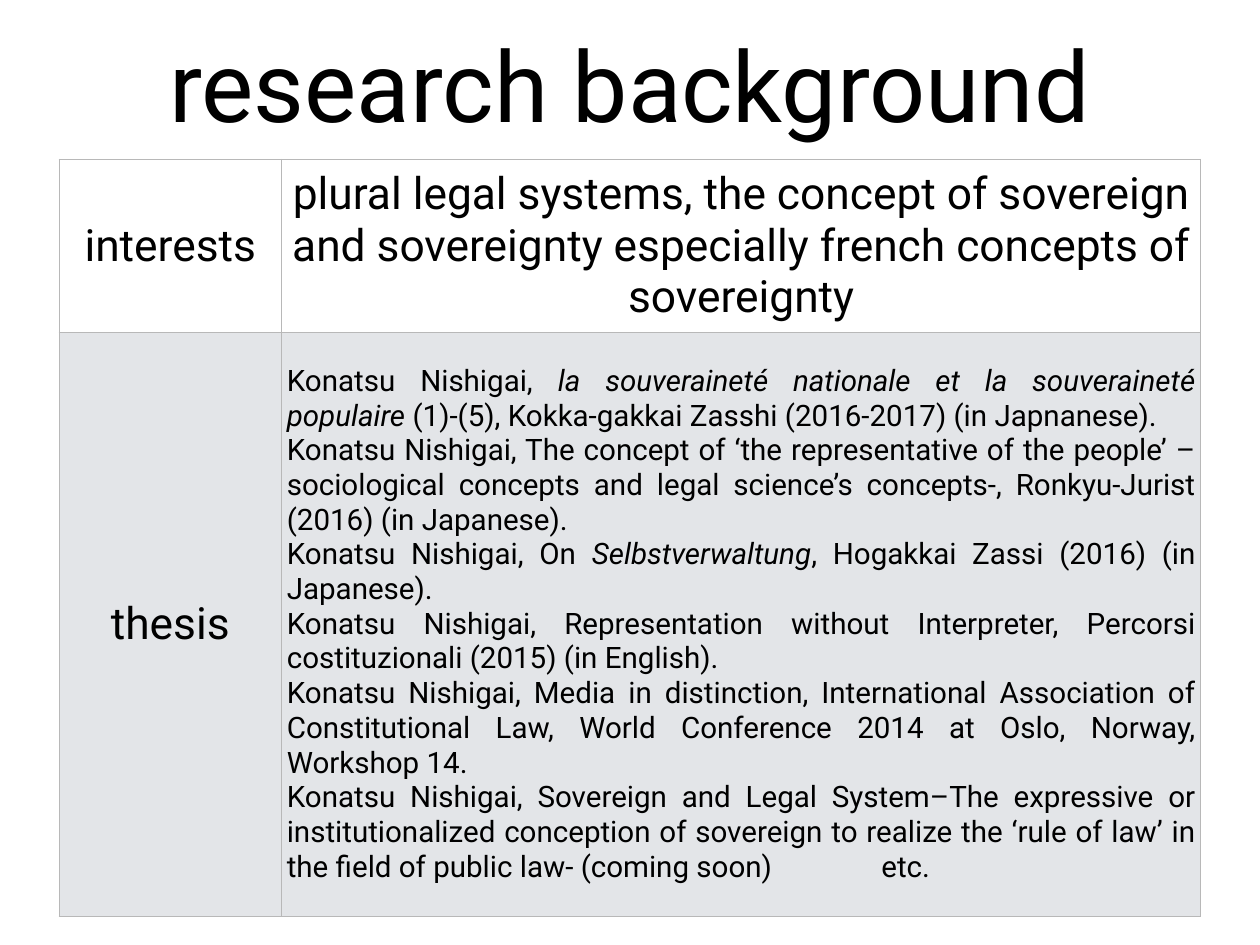
from lxml.etree import SubElement
from pptx import Presentation
from pptx.dml.color import RGBColor
from pptx.enum.text import MSO_ANCHOR, PP_ALIGN
from pptx.oxml.ns import qn
from pptx.util import Inches, Pt

BLACK = RGBColor(0x00, 0x00, 0x00)
WHITE = RGBColor(0xFF, 0xFF, 0xFF)
PALE_GRAY = RGBColor(0xE3, 0xE5, 0xE8)
RULE_GRAY = RGBColor(0xB8, 0xB8, 0xB8)

INTERESTS = ("plural legal systems, the concept of sovereign and sovereignty "
             "especially french concepts of sovereignty")

# Each publication is a list of (text, italic) spans after the author's name
AUTHOR = "Konatsu Nishigai, "
PUBLICATIONS = [
    [("la souveraineté nationale et la souveraineté populaire", True),
     (" (1)-(5), Kokka-gakkai Zasshi (2016-2017) (in Japnanese).", False)],
    [("The concept of ‘the representative of the people’ – sociological concepts "
      "and legal science’s concepts-, Ronkyu-Jurist (2016) (in Japanese).", False)],
    [("On ", False), ("Selbstverwaltung", True),
     (", Hogakkai Zassi (2016) (in Japanese).", False)],
    [("Representation without Interpreter, Percorsi costituzionali (2015) "
      "(in English).", False)],
    [("Media in distinction, International Association of Constitutional Law, "
      "World Conference 2014 at Oslo, Norway, Workshop 14.", False)],
    [("Sovereign and Legal System–The expressive or institutionalized conception "
      "of sovereign to realize the ‘rule of law’ in the field of public law- "
      "(coming soon)\tetc.", False)],
]


class SlideBuilder:
    """Holds the style and the slide, measured on a 64 by 48 grid."""

    font = "Roboto"
    inset = Inches(0.06)

    def __init__(self, deck):
        self.page = deck.slides.add_slide(deck.slide_layouts[6])
        self.column = deck.slide_width / 64
        self.row = deck.slide_height / 48

    def across(self, columns):
        return round(columns * self.column)

    def down(self, rows):
        return round(rows * self.row)

    def frame(self, left, top, width, height):
        return (self.across(left), self.down(top),
                self.across(width), self.down(height))

    def pad(self, holder):
        holder.margin_left = holder.margin_right = self.inset
        holder.margin_top = holder.margin_bottom = self.inset
        holder.vertical_anchor = MSO_ANCHOR.MIDDLE

    def add_text(self, text_frame, paragraphs, size, align=PP_ALIGN.CENTER):
        for index, spans in enumerate(paragraphs):
            para = text_frame.add_paragraph() if index else text_frame.paragraphs[0]
            para.alignment = align
            for text, italic in spans:
                span = para.add_run()
                span.text = text
                span.font.name = self.font
                span.font.size = Pt(size)
                span.font.italic = italic
                span.font.color.rgb = BLACK

    def title(self, text, *place):
        box = self.page.shapes.add_textbox(*self.frame(*place))
        box.text_frame.word_wrap = True
        self.pad(box.text_frame)
        self.add_text(box.text_frame, [[(text, False)]], 80)

    def table(self, left, top, widths, heights):
        place = self.frame(left, top, sum(widths), sum(heights))
        table = self.page.shapes.add_table(len(heights), len(widths), *place).table
        table.first_row = table.horz_banding = False
        for column, width in zip(table.columns, widths):
            column.width = self.across(width)
        for row, height in zip(table.rows, heights):
            row.height = self.down(height)
        return table

    def cell(self, cell, fill, paragraphs, size=36, align=PP_ALIGN.CENTER):
        self.pad(cell)
        self.border(cell)
        cell.fill.solid()
        cell.fill.fore_color.rgb = fill
        self.add_text(cell.text_frame, paragraphs, size, align)

    def border(self, cell):
        properties = cell._tc.get_or_add_tcPr()
        for side in ("L", "R", "T", "B"):
            line = SubElement(properties, qn(f"a:ln{side}"), w=str(Pt(1)))
            fill = SubElement(line, qn("a:solidFill"))
            SubElement(fill, qn("a:srgbClr"), val=str(RULE_GRAY))

    def tab_stop(self, para, columns):
        stops = SubElement(para._p.get_or_add_pPr(), qn("a:tabLst"))
        SubElement(stops, qn("a:tab"), pos=str(self.across(columns)), algn="l")


def main():
    deck = Presentation()
    deck.slide_width, deck.slide_height = Inches(14.22), Inches(10.67)
    slide = SlideBuilder(deck)

    # Heading
    slide.title("research background", 4.7, -1.08, 54.6, 10.62)

    # Interests and thesis table
    table = slide.table(3, 8.1, (11.3, 46.7), (8.78, 29.65))
    slide.cell(table.cell(0, 0), WHITE, [[("interests", False)]])
    slide.cell(table.cell(0, 1), WHITE, [[(INTERESTS, False)]])
    slide.cell(table.cell(1, 0), PALE_GRAY, [[("thesis", False)]])

    # Publications, with the closing "etc." set at a tab stop
    entries = [[(AUTHOR, False), *spans] for spans in PUBLICATIONS]
    thesis = table.cell(1, 1)
    slide.cell(thesis, PALE_GRAY, entries, 24, PP_ALIGN.JUSTIFY)
    slide.tab_stop(thesis.text_frame.paragraphs[-1], 30.2)

    deck.save("out.pptx")


if __name__ == "__main__":
    main()
